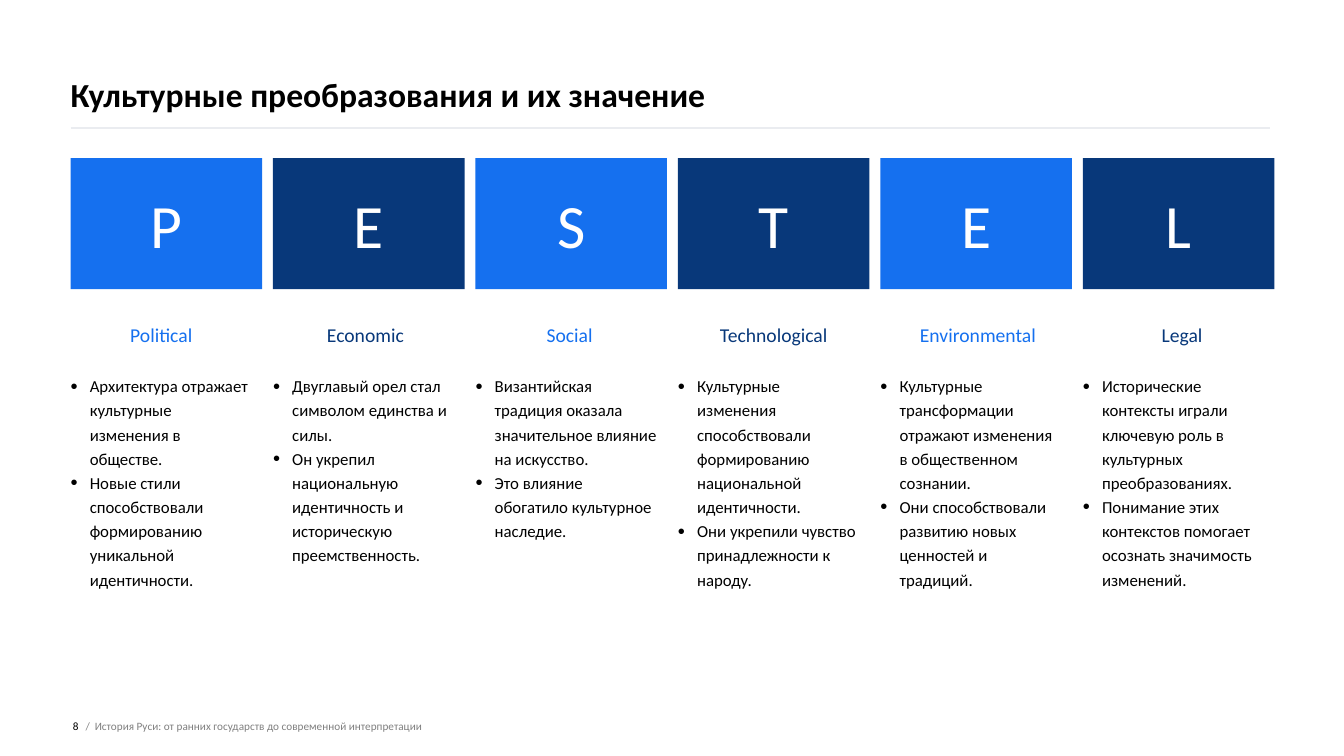
from lxml import etree
from pptx import Presentation
from pptx.dml.color import RGBColor
from pptx.enum import shapes, text
from pptx.oxml import ns
from pptx.util import Inches, Pt

BLUE = RGBColor(0x15, 0x70, 0xEF)
NAVY = RGBColor(0x08, 0x38, 0x7A)
WHITE = RGBColor(0xFF, 0xFF, 0xFF)
BLACK = RGBColor(0, 0, 0)
GRAY = RGBColor(0x80, 0x80, 0x80)
RULE = RGBColor(0xEA, 0xEC, 0xF0)
ALIGN = text.PP_ALIGN
ANCHOR = text.MSO_ANCHOR

COLUMNS = [
    ("Political",
     "Архитектура отражает культурные изменения в обществе.",
     "Новые стили способствовали формированию уникальной идентичности."),
    ("Economic",
     "Двуглавый орел стал символом единства и силы.",
     "Он укрепил национальную идентичность и историческую преемственность."),
    ("Social",
     "Византийская традиция оказала значительное влияние на искусство.",
     "Это влияние обогатило культурное наследие."),
    ("Technological",
     "Культурные изменения способствовали формированию национальной идентичности.",
     "Они укрепили чувство принадлежности к народу."),
    ("Environmental",
     "Культурные трансформации отражают изменения в общественном сознании.",
     "Они способствовали развитию новых ценностей и традиций."),
    ("Legal",
     "Исторические контексты играли ключевую роль в культурных преобразованиях.",
     "Понимание этих контекстов помогает осознать значимость изменений."),
]


def place(shape, x, y, w, h):
    shape.left, shape.top = Inches(x), Inches(y)
    shape.width, shape.height = Inches(w), Inches(h)


def write(shape, lines, size, color, align=ALIGN.LEFT, anchor=ANCHOR.TOP, bold=False):
    frame = shape.text_frame
    frame.text = "\n".join(lines)
    frame.word_wrap = True
    frame.auto_size = text.MSO_AUTO_SIZE.NONE
    frame.vertical_anchor = anchor
    frame.margin_left = frame.margin_right = 0
    frame.margin_top = frame.margin_bottom = 0
    for par in frame.paragraphs:
        par.alignment = align
        par.space_before = Pt(0)
        par.font.name = "Calibri"
        par.font.size = Pt(size)
        par.font.bold = bold
        par.font.color.rgb = color


prs = Presentation()
prs.slide_width, prs.slide_height = Inches(13.33), Inches(7.5)
layout = prs.slide_layouts[1]
slide = prs.slides.add_slide(layout)
items = slide.shapes

# Title and the rule below it
title = items.title
place(title, 0.7, 0, 11.94, 1.13)
write(title, ["Культурные преобразования и их значение"], 24, BLACK,
      anchor=ANCHOR.BOTTOM, bold=True)
rule = items.add_connector(shapes.MSO_CONNECTOR.STRAIGHT,
                           Inches(0.7), Inches(1.27), Inches(12.6), Inches(1.27))
rule.line.color.rgb = RULE
rule.line.width = Pt(2)
etree.SubElement(rule._element.spPr, ns.qn("a:effectLst"))

# One list placeholder per column
for _ in COLUMNS[1:]:
    items.clone_placeholder(layout.placeholders[1])
lists = [ph for ph in slide.placeholders if ph.placeholder_format.idx == 1]

# Columns: letter tile, heading, bullet list
for i, ((name, *points), body) in enumerate(zip(COLUMNS, lists)):
    x = 0.7 + 2.008 * i
    color = NAVY if i % 2 else BLUE

    tile = items.add_shape(shapes.MSO_SHAPE.RECTANGLE, Inches(x), Inches(1.57),
                           Inches(1.9), Inches(1.3))
    tile.shadow.inherit = False
    tile.fill.solid()
    tile.fill.fore_color.rgb = color
    tile.line.fill.background()
    write(tile, [name[0]], 44, WHITE, ALIGN.CENTER, ANCHOR.MIDDLE)

    head = items.add_textbox(Inches(0.8 + 2.025 * i), Inches(3.2),
                             Inches(1.6), Inches(0.23))
    write(head, [name], 14, color, ALIGN.CENTER)

    place(body, x, 3.69, 1.8, 2.6)
    write(body, points, 12, BLACK)
    for par in body.text_frame.paragraphs:
        par.line_spacing = 1.2
        props = par._p.get_or_add_pPr()
        props.set("marL", str(Inches(0.19)))
        props.set("indent", str(-Inches(0.19)))
        mark = etree.Element(ns.qn("a:buSzPct"), val="120000")
        char = etree.Element(ns.qn("a:buChar"), char="•")
        spot = props.find(ns.qn("a:defRPr"))
        for part in (mark, char):
            if spot is None:
                props.append(part)
            else:
                spot.addprevious(part)

# Footer: page number, slash, deck name
for x, w, words, color, align in [
    (0.47, 0.31, "8", BLACK, ALIGN.RIGHT),
    (0.85, 0.09, "/", GRAY, ALIGN.LEFT),
    (0.94, 8.61, "История Руси: от ранних государств до современной интерпретации",
     GRAY, ALIGN.LEFT),
]:
    box = items.add_textbox(Inches(x), Inches(6.9), Inches(w), Inches(0.6))
    write(box, [words], 8, color, align, ANCHOR.MIDDLE)

prs.save("out.pptx")
